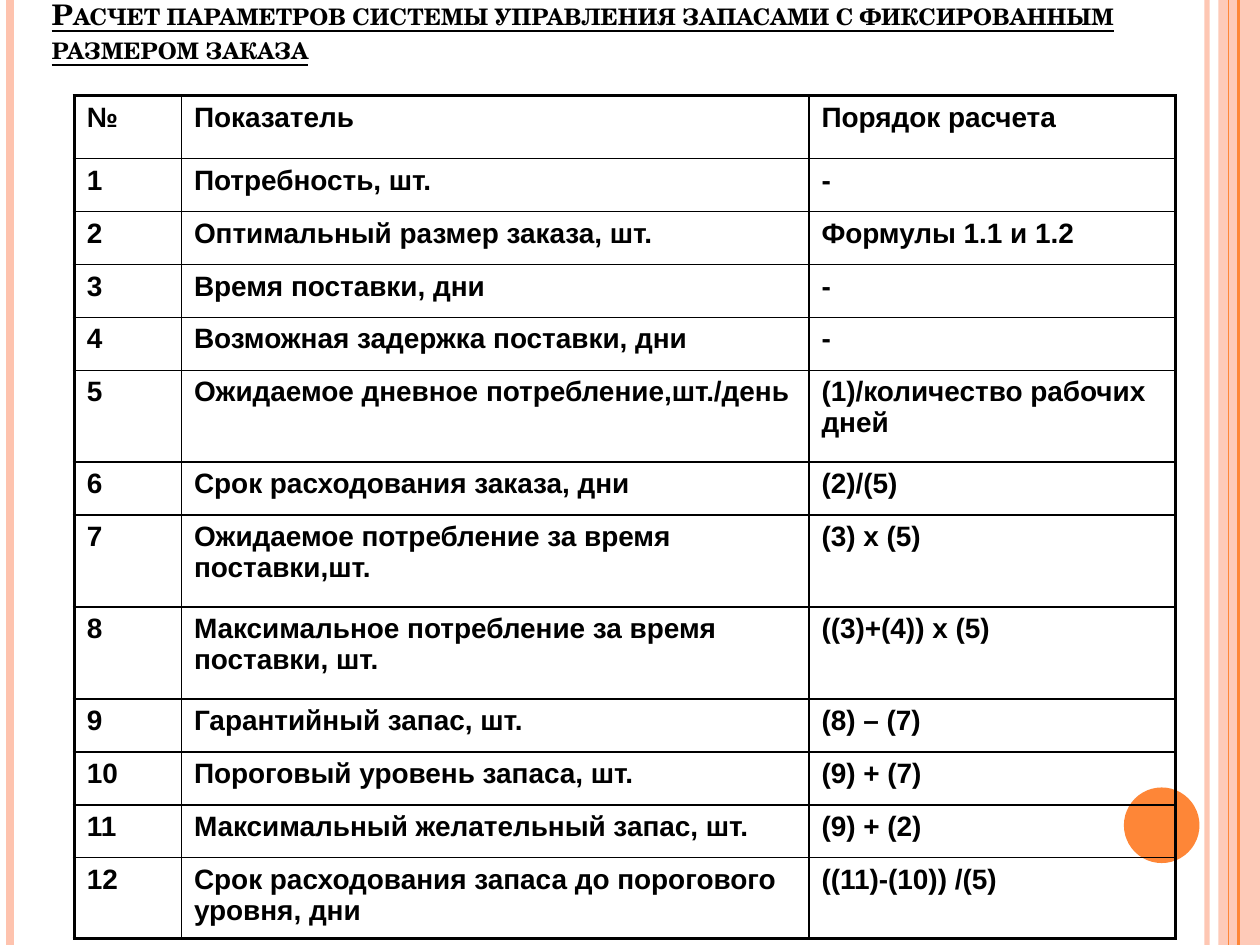
"""Builds the slide on stock control parameters with a fixed order size."""
from lxml.etree import SubElement as Sub
from pptx import Presentation
from pptx.dml.color import RGBColor
from pptx.enum.shapes import MSO_CONNECTOR as LINE, MSO_SHAPE as SHAPE
from pptx.enum.text import MSO_ANCHOR as ANCHOR, MSO_AUTO_SIZE as AUTO, PP_ALIGN as ALIGN
from pptx.oxml import parse_xml
from pptx.oxml.ns import qn
from pptx.util import Inches, Pt

rgb = RGBColor.from_string


def style(run, look, hue="000000"):
    """Set the font values of a run."""
    for key, val in look.items():
        setattr(run.font, key, val)
    run.font.color.rgb = rgb(hue)


def edge(side, width):
    """Make one black cell border."""
    return parse_xml(
        f'<a:{side} xmlns:a="http://schemas.openxmlformats.org/drawingml/2006/main" w="{Pt(width)}">'
        '<a:solidFill><a:srgbClr val="000000"/></a:solidFill>'
        f'<a:prstDash val="solid"/></a:{side}>')


deck = Presentation()
deck.slide_width, deck.slide_height = Inches(10), Inches(7.5)
slide = deck.slides.add_slide(deck.slide_layouts[5])
shapes = slide.shapes

PINK, ORANGE = "FEC3AE", "FE8637"

stripes = [(9.58, PINK, 3, 93), (0.08, PINK, 4.5, 100), (9.83, ORANGE, 1.5, 100), (9.75, ORANGE, 0.75, 100)]
band = (SHAPE.RECTANGLE, 9.67, 0, 0.33, 7.5, PINK, 87)
disc = (SHAPE.OVAL, 8.92, 6.25, 0.6, 0.6, ORANGE, 100)

for kind, left, top, wide, high, hue, alpha in (band, disc):
    part = shapes.add_shape(kind, Inches(left), Inches(top), Inches(wide), Inches(high))
    part.shadow.inherit = False
    part.fill.solid()
    part.fill.fore_color.rgb = rgb(hue)
    part.line.fill.background()
    if alpha < 100:
        tint = part.fill._xPr.find(".//" + qn("a:srgbClr"))
        Sub(tint, qn("a:alpha"), val=str(alpha * 1000))

for left, hue, width, alpha in stripes:
    bar = shapes.add_connector(LINE.STRAIGHT, Inches(left), 0, Inches(left), Inches(7.5))
    bar.line.width = Pt(width)
    bar.line.color.rgb = rgb(hue)
    if alpha < 100:
        tint = bar.line._ln.find(".//" + qn("a:srgbClr"))
        Sub(tint, qn("a:alpha"), val=str(alpha * 1000))
    Sub(bar._element.spPr, qn("a:effectLst"))

title = shapes.title
title.left, title.top, title.width, title.height = (Inches(n) for n in (0.31, 0.02, 9.69, 0.55))
frame = title.text_frame
frame.word_wrap, frame.auto_size, frame.vertical_anchor = True, AUTO.NONE, ANCHOR.BOTTOM
frame.paragraphs[0].alignment = ALIGN.LEFT
run = frame.paragraphs[0].add_run()
run.text = "Расчет параметров системы управления запасами с фиксированным размером заказа"
style(run, {"name": "TeX Gyre Schola", "size": Pt(16.2), "bold": True, "underline": True})
run._r.get_or_add_rPr().set("cap", "small")

rows = [
    ("№", "Показатель", "Порядок расчета", 0.5),
    ("1", "Потребность, шт.", "-", 0.42),
    ("2", "Оптимальный размер заказа, шт.", "Формулы 1.1 и 1.2", 0.42),
    ("3", "Время поставки, дни", "-", 0.42),
    ("4", "Возможная задержка поставки, дни", "-", 0.42),
    ("5", "Ожидаемое дневное потребление,шт./день", "(1)/количество рабочих дней", 0.73),
    ("6", "Срок расходования заказа, дни", "(2)/(5)", 0.42),
    ("7", "Ожидаемое потребление за время поставки,шт.", "(3) х (5)", 0.73),
    ("8", "Максимальное потребление за время поставки, шт.", "((3)+(4)) х (5)", 0.73),
    ("9", "Гарантийный запас, шт.", "(8) – (7)", 0.42),
    ("10", "Пороговый уровень запаса, шт.", "(9) + (7)", 0.42),
    ("11", "Максимальный желательный запас, шт.", "(9) + (2)", 0.42),
    ("12", "Срок расходования запаса до порогового уровня, дни", "((11)-(10)) /(5)", 0.64),
]
cols = (0.85, 4.98, 2.91)
look = {"name": "Arial", "size": Pt(16), "bold": True}

table = shapes.add_table(len(rows), len(cols), Inches(0.59), Inches(0.76), Inches(8.74), Inches(6.69)).table
table.first_row = table.horz_banding = False
for col, wide in zip(table.columns, cols):
    col.width = Inches(wide)

for i, (*texts, high) in enumerate(rows):
    table.rows[i].height = Inches(high)
    for j, text in enumerate(texts):
        cell = table.cell(i, j)
        cell.fill.background()
        run = cell.text_frame.paragraphs[0].add_run()
        run.text = text
        style(run, look)
        outer = {"lnL": j == 0, "lnR": j == len(cols) - 1, "lnT": i == 0, "lnB": i == len(rows) - 1}
        for n, (side, thick) in enumerate(outer.items()):
            cell._tc.get_or_add_tcPr().insert(n, edge(side, 2.25 if thick else 1))

deck.save("out.pptx")
